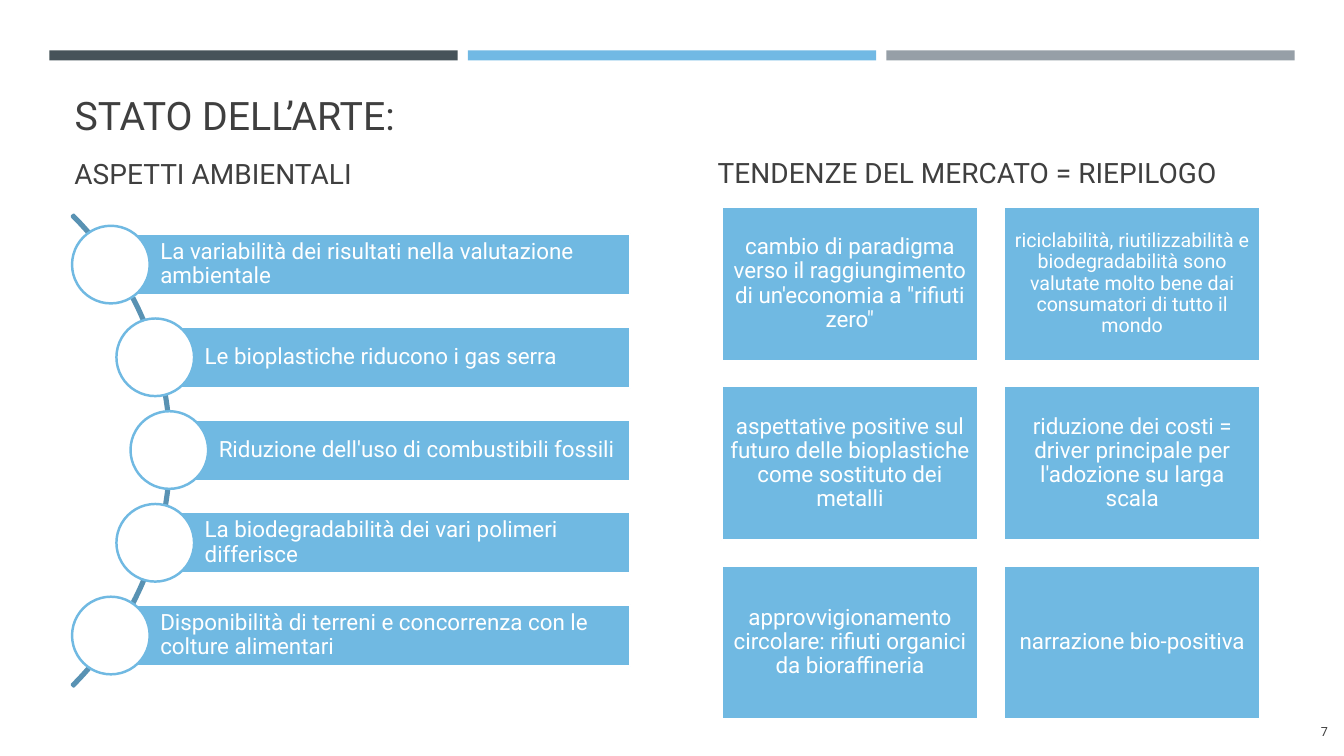
import pptx
import pptx.util
import pptx.dml.color
import pptx.enum.shapes
import pptx.enum.text

Inches = pptx.util.Inches
SHAPE = pptx.enum.shapes.MSO_SHAPE
ALIGN = pptx.enum.text.PP_ALIGN
ANCHOR = pptx.enum.text.MSO_ANCHOR

COLORS = {"dark": "465359", "sky": "71B9E4", "gray": "969FA7", "box": "70B9E2",
          "arc": "5992B3", "text": "3F3F3F", "white": "FFFFFF"}
FONT = "Roboto"

TITLE = "STATO DELL’ARTE:"
HEADINGS = [
    ("ASPETTI AMBIENTALI", 0.64, 1.1),
    ("TENDENZE DEL MERCATO = RIEPILOGO", 7.02, 1.0),
]
PAGE = "7"
STRIPES = ["dark", "sky", "gray"]
ASPECTS = [
    ("La variabilità dei risultati nella valutazione ambientale", 1.1),
    ("Le bioplastiche riducono i gas serra", 1.54),
    ("Riduzione dell'uso di combustibili fossili", 1.68),
    ("La biodegradabilità dei vari polimeri differisce", 1.54),
    ("Disponibilità di terreni e concorrenza con le colture alimentari", 1.1),
]
TRENDS = [
    ("cambio di paradigma verso il raggiungimento di un'economia a \"rifiuti zero\"", 16),
    ("riciclabilità, riutilizzabilità e biodegradabilità sono valutate molto bene "
     "dai consumatori di tutto il mondo", 14),
    ("aspettative positive sul futuro delle bioplastiche come sostituto dei metalli", 16),
    ("riduzione dei costi = driver principale per l'adozione su larga scala", 16),
    ("approvvigionamento circolare: rifiuti organici da bioraffineria", 16),
    ("narrazione bio-positiva", 16),
]


def rgb(name):
    return pptx.dml.color.RGBColor.from_string(COLORS[name])


def write(sp, text, size, color, insets, anchor=ANCHOR.MIDDLE, align=ALIGN.LEFT, spacing=1.0):
    tf = sp.text_frame
    left, top, right, bottom = insets
    frame = {"word_wrap": True, "auto_size": pptx.enum.text.MSO_AUTO_SIZE.NONE,
             "vertical_anchor": anchor,
             "margin_left": Inches(left), "margin_top": Inches(top),
             "margin_right": Inches(right), "margin_bottom": Inches(bottom)}
    for key, value in frame.items():
        setattr(tf, key, value)
    p = tf.paragraphs[0]
    p.alignment = align
    p.line_spacing = spacing
    r = p.add_run()
    r.text = text
    for key, value in {"name": FONT, "size": pptx.util.Pt(size), "bold": False}.items():
        setattr(r.font, key, value)
    r.font.color.rgb = rgb(color)


def add_shape(s, kind, box, fill, line=None):
    sp = s.shapes.add_shape(kind, *map(Inches, box))
    sp.shadow.inherit = False
    sp.fill.solid()
    sp.fill.fore_color.rgb = rgb(fill)
    if line:
        sp.line.color.rgb = rgb(line)
        sp.line.width = pptx.util.Pt(1.75)
    else:
        sp.line.fill.background()
    return sp


def add_text(s, box, *args, **kwargs):
    write(s.shapes.add_textbox(*map(Inches, box)), *args, **kwargs)


def add_header(s):
    for i, color in enumerate(STRIPES):
        add_shape(s, SHAPE.RECTANGLE, (0.49 + 4.15 * i, 0.5, 4.05, 0.1), color)
    title = s.shapes.title
    box = {"left": 0.64, "top": 0.8, "width": 12.06, "height": 1.08}
    for key, value in box.items():
        setattr(title, key, Inches(value))
    write(title, TITLE, 28, "text", (0.1, 0.11, 0.1, 0.05), anchor=ANCHOR.TOP)
    for text, left, spacing in HEADINGS:
        add_text(s, (left, 1.4, 5.68, 0.61), text, 20, "text",
                 (0.1, 0.05, 0.1, 0.05), spacing=spacing)


def add_aspects(s):
    right, first_top, pitch, bar_h, dot = 6.25, 2.32, 0.92, 0.61, 0.77
    arc = add_shape(s, SHAPE.BLOCK_ARC, (-4.92, 1.16, 6.62, 6.62), "arc", "arc")
    for i, value in enumerate((189, 27, 0.004)):
        arc.adjustments[i] = value
    for i, (text, left) in enumerate(ASPECTS):
        top = first_top + pitch * i
        bar = add_shape(s, SHAPE.RECTANGLE, (left, top, right - left, bar_h), "box", "white")
        write(bar, text, 16, "white", (0.49, 0.04, 0.04, 0.04), spacing=0.9)
        add_shape(s, SHAPE.OVAL, (left - dot / 2, top + (bar_h - dot) / 2, dot, dot),
                  "white", "box")


def add_trends(s):
    for i, (text, size) in enumerate(TRENDS):
        row, col = divmod(i, 2)
        card = add_shape(s, SHAPE.RECTANGLE,
                         (7.16 + 2.8 * col, 2.05 + 1.78 * row, 2.54, 1.53), "box", "white")
        inset = 0.07 if size == 16 else 0.06
        write(card, text, size, "white", (inset,) * 4, align=ALIGN.CENTER, spacing=0.9)


def main():
    prs = pptx.Presentation()
    prs.slide_width = Inches(13.33)
    prs.slide_height = Inches(7.5)
    s = prs.slides.add_slide(prs.slide_layouts[5])
    add_header(s)
    add_aspects(s)
    add_trends(s)
    add_text(s, (12.12, 7.06, 1.15, 0.4), PAGE, 9, "text",
             (0.1, 0.05, 0.1, 0.05), align=ALIGN.RIGHT)
    prs.save("out.pptx")


if __name__ == "__main__":
    main()
